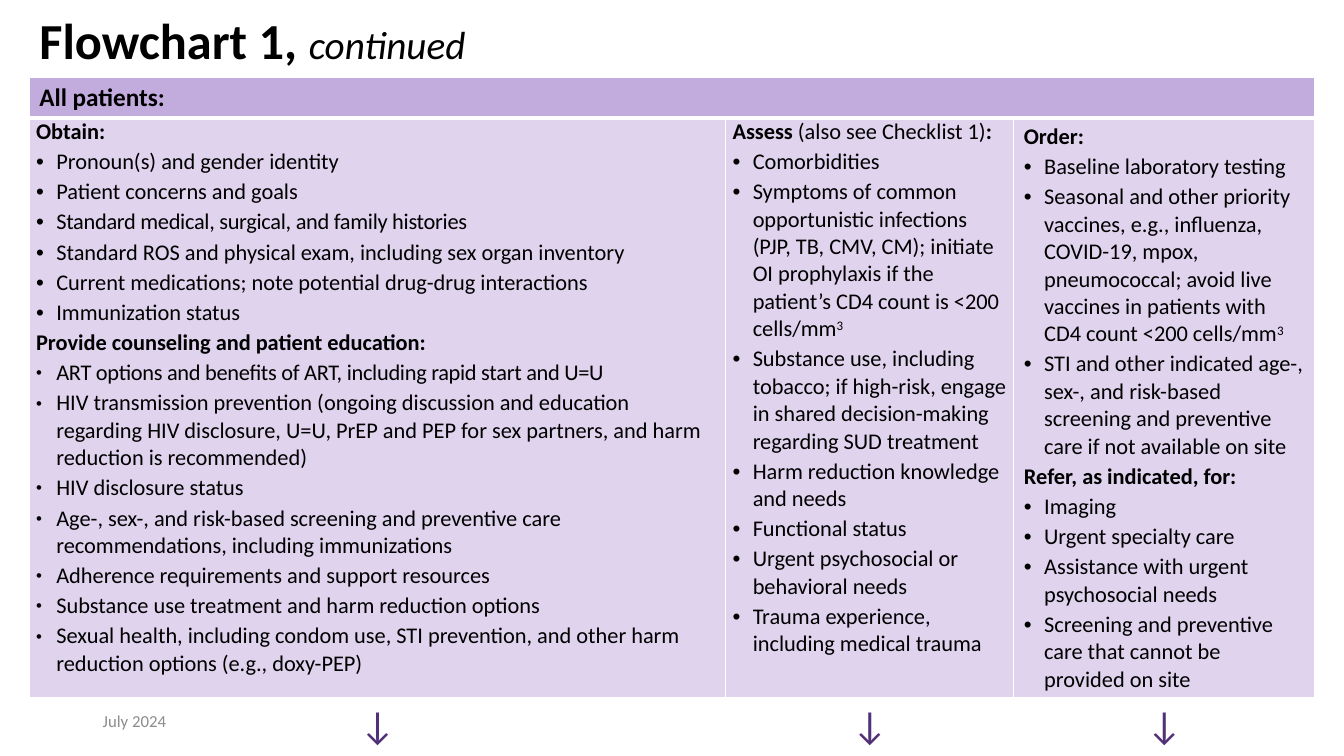
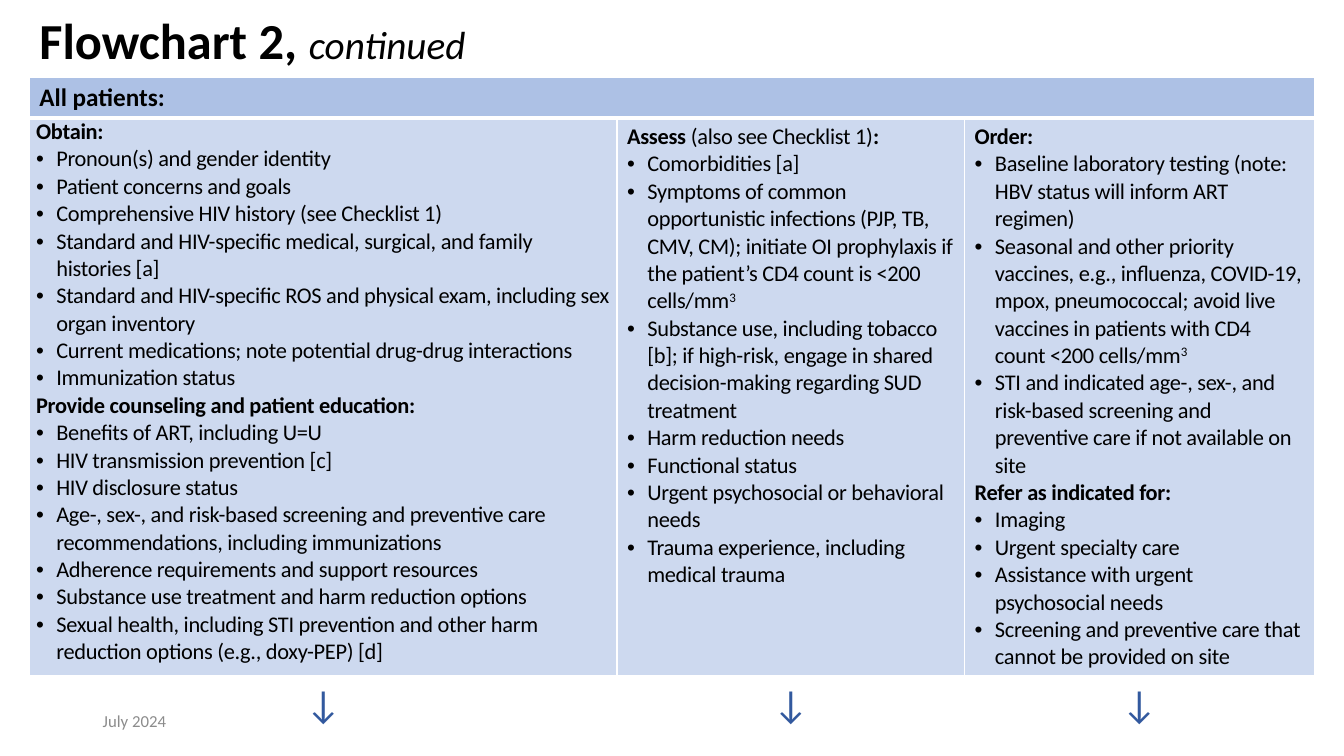
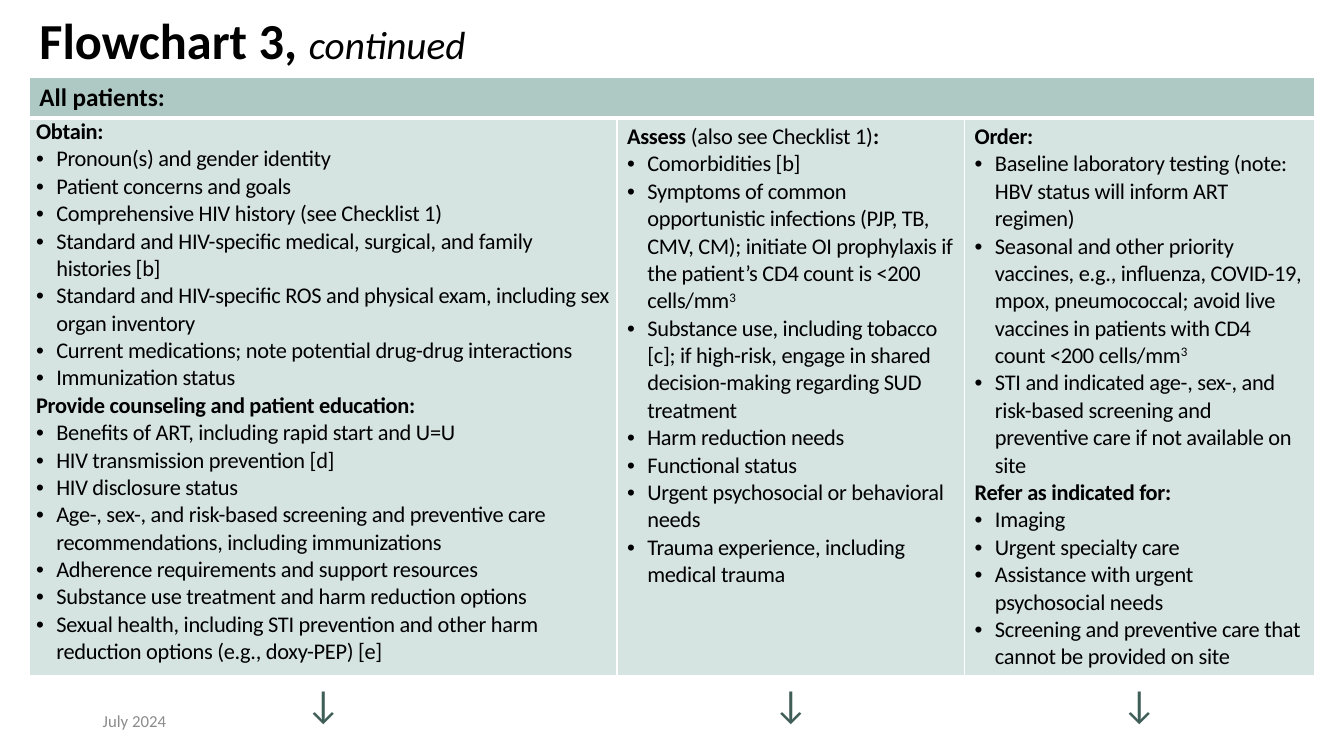
from collections import namedtuple

from lxml import etree
from pptx import Presentation
from pptx import util as u
from pptx.dml.color import RGBColor
from pptx.enum import text
from pptx.oxml import ns

Cm, Pt = u.Cm, u.Pt
Section = namedtuple("Section", "heading items bullet_size", defaults=[100])
# Column: tight cells have narrow side margins and none above
Column = namedtuple("Column", "width sections tight", defaults=[False])
Theme = namedtuple("Theme", "header body arrow")


def color(value):
    return RGBColor.from_string(value)


def add_xml(parent, tag, **attributes):
    return etree.SubElement(parent, ns.qn(tag), **attributes)


class Flowchart:
    """Holds the shared style and the current slide."""
    FONT, INK, GRAY, WHITE = "Calibri", "000000", "8C8C8C", "FFFFFF"
    LEFT, TABLE_TOP = Cm(0.74), Cm(1.96)
    HEADER_HEIGHT, ARROW_HEIGHT = Cm(1), Cm(1.21)
    INDENT = Cm(0.51)

    def __init__(self):
        self.deck = Presentation()
        self.deck.slide_width, self.deck.slide_height = Cm(33.87), Cm(19.05)
        self.page = None

    def add_page(self, title):
        self.page = self.deck.slides.add_slide(self.deck.slide_layouts[5])
        self.title(title)
        self.footer("July 2024")

    def add_span(self, para, words, size, bold=False, ink=INK, italic=None,
                 **attributes):
        span = para.add_run()
        span.text = words
        font = span.font
        font.name, font.size, font.bold = self.FONT, Pt(size), bold
        font.italic = italic
        font.color.rgb = color(ink)
        for name, value in attributes.items():
            span._r.get_or_add_rPr().set(name, value)

    def title(self, words):
        box = self.page.shapes.title
        box.left, box.top, box.width, box.height = (
            self.LEFT, Cm(0.43), Cm(28), Cm(1.32))
        frame = box.text_frame
        frame.auto_size = text.MSO_AUTO_SIZE.NONE
        frame.vertical_anchor = text.MSO_ANCHOR.MIDDLE
        para = frame.paragraphs[0]
        para.alignment, para.line_spacing = text.PP_ALIGN.LEFT, 0.9
        self.add_span(para, words + ", ", 36, bold=True)
        self.add_span(para, "continued", 28, italic=True)

    def footer(self, words):
        box = self.page.shapes.add_textbox(Cm(2.34), Cm(17.65), Cm(7.62), Cm(1.02))
        frame = box.text_frame
        frame.word_wrap = True
        frame.vertical_anchor = text.MSO_ANCHOR.MIDDLE
        self.add_span(frame.paragraphs[0], words, 12, ink=self.GRAY)

    def borders(self, cell, top=1, bottom=1):
        properties = cell._tc.get_or_add_tcPr()
        widths = {"a:lnL": 1, "a:lnR": 1, "a:lnT": top, "a:lnB": bottom}
        for place, (tag, width) in enumerate(widths.items()):
            line = add_xml(properties, tag, w=str(Pt(width)))
            add_xml(add_xml(line, "a:solidFill"), "a:srgbClr", val=self.WHITE)
            properties.insert(place, line)

    def bullet(self, para, size):
        properties = para._p.get_or_add_pPr()
        properties.set("marL", str(self.INDENT))
        properties.set("indent", str(-self.INDENT))
        if size != 100:
            add_xml(properties, "a:buSzPct", val=str(size * 1000))
        add_xml(properties, "a:buFont", typeface="Arial")
        add_xml(properties, "a:buChar", char="•")

    def sections(self, cell, sections, gap, condensed):
        """In headings | toggles bold; in items ^ starts a superscript
        and a leading ~ condenses the line."""
        frame = cell.text_frame
        paras = iter(frame.paragraphs)

        def next_para():
            first = next(paras, None)
            para = first or frame.add_paragraph()
            para.space_before = Pt(0 if first else gap)
            para.space_after = Pt(gap)
            return para

        normal = "-20" if condensed else "0"
        for section in sections:
            para = next_para()
            for place, words in enumerate(section.heading.split("|")):
                self.add_span(para, words, 16, bold=place % 2 == 0, spc=normal)
            for item in section.items:
                para = next_para()
                self.bullet(para, section.bullet_size)
                spacing = "-20" if item.startswith("~") else normal
                base, _, raised = item.lstrip("~").partition("^")
                self.add_span(para, base, 16, spc=spacing)
                if raised:
                    self.add_span(para, raised, 16, spc=spacing, baseline="30000")

    def table(self, columns, theme, body_height, gap=0, condensed=False):
        heights = [self.HEADER_HEIGHT, body_height, self.ARROW_HEIGHT]
        widths = [Cm(column.width) for column in columns]
        table = self.page.shapes.add_table(
            3, len(columns), self.LEFT, self.TABLE_TOP, sum(widths), sum(heights)).table
        table.first_row = table.horz_banding = False
        for row, height in zip(table.rows, heights):
            row.height = height

        for place, column in enumerate(columns):
            table.columns[place].width = widths[place]
            header, body, arrow = (table.cell(row, place) for row in range(3))
            for cell, fill in ((header, theme.header), (body, theme.body)):
                cell.fill.solid()
                cell.fill.fore_color.rgb = color(fill)
            arrow.fill.background()
            self.borders(header, bottom=3)
            self.borders(body, top=3)
            self.borders(arrow)

            if column.tight:
                body.margin_left = body.margin_right = Cm(0.17)
                body.margin_top = body.margin_bottom = 0
            self.sections(body, column.sections, gap, condensed)
            para = arrow.text_frame.paragraphs[0]
            para.alignment = text.PP_ALIGN.CENTER
            self.add_span(para, "↓", 28, ink=theme.arrow)

        header = table.cell(0, 0)
        header.merge(table.cell(0, len(columns) - 1))
        self.add_span(header.text_frame.paragraphs[0], "All patients:", 18, bold=True)


# Wording that all slides share
COUNSELING = "Provide counseling and patient education:"
ASSESS = "Assess |(also see Checklist 1)|:"
IDENTITY = ["Pronoun(s) and gender identity", "Patient concerns and goals"]
MEDICATIONS = ["Current medications; note potential drug-drug interactions",
               "Immunization status"]
EDUCATION = [
    "HIV disclosure status",
    "Age-, sex-, and risk-based screening and preventive care recommendations, "
    "including immunizations",
    "Adherence requirements and support resources",
    "Substance use treatment and harm reduction options",
]
SYMPTOMS = ("Symptoms of common opportunistic infections (PJP, TB, CMV, CM); initiate "
            "OI prophylaxis if the patient’s CD4 count is <200 cells/mm^3")
SUBSTANCE = ("Substance use, including tobacco{}; if high-risk, engage in shared "
             "decision-making regarding SUD treatment")
WELLBEING = ["Functional status", "Urgent psychosocial or behavioral needs",
             "Trauma experience, including medical trauma"]
VACCINES = ("Seasonal and other priority vaccines, e.g., influenza, COVID-19, mpox, "
            "pneumococcal; avoid live vaccines in patients with CD4 count "
            "<200 cells/mm^3")
SCREENING = ("STI and {}indicated age-, sex-, and risk-based screening and preventive "
             "care if not available on site")
REFERRALS = ["Imaging", "Urgent specialty care",
             "Assistance with urgent psychosocial needs",
             "Screening and preventive care that cannot be provided on site"]


def first_columns():
    obtain = Section("Obtain:", IDENTITY + [
        "~Standard medical, surgical, and family histories",
        "Standard ROS and physical exam, including sex organ inventory"] + MEDICATIONS)
    counsel = Section(COUNSELING, [
        "~ART options and benefits of ART, including rapid start and U=U",
        "HIV transmission prevention (ongoing discussion and education regarding HIV "
        "disclosure, U=U, PrEP and PEP for sex partners, and harm reduction is "
        "recommended)"] + EDUCATION + [
        "Sexual health, including condom use, STI prevention, and other harm "
        "reduction options (e.g., doxy-PEP)"], 75)
    assess = Section(ASSESS, ["Comorbidities", SYMPTOMS, SUBSTANCE.format(""),
                              "Harm reduction knowledge and needs"] + WELLBEING)
    order = Section("Order:", ["Baseline laboratory testing", VACCINES,
                               SCREENING.format("other ")])
    refer = Section("Refer, as indicated, for:", REFERRALS)
    return [Column(17.55, [obtain, counsel], True), Column(7.26, [assess], True),
            Column(7.58, [order, refer])]


def later_columns(benefits, notes):
    """Columns of flowcharts 2 and 3, with their four footnote letters."""
    history, tobacco, prevention, sexual = (f" [{letter}]" for letter in notes)
    obtain = Section("Obtain:", IDENTITY + [
        "Comprehensive HIV history (see Checklist 1)",
        "Standard and HIV-specific medical, surgical, and family histories" + history,
        "Standard and HIV-specific ROS and physical exam, including sex organ "
        "inventory"] + MEDICATIONS)
    counsel = Section(COUNSELING, [
        benefits, "HIV transmission prevention" + prevention] + EDUCATION + [
        "Sexual health, including STI prevention and other harm reduction options "
        "(e.g., doxy-PEP)" + sexual])
    assess = Section(ASSESS, ["Comorbidities" + history, SYMPTOMS,
                              SUBSTANCE.format(tobacco),
                              "Harm reduction needs"] + WELLBEING)
    order = Section("Order:", [
        "Baseline laboratory testing (note: HBV status will inform ART regimen)",
        VACCINES, SCREENING.format("")])
    refer = Section("Refer as indicated for:", REFERRALS)
    return [Column(14.81, [obtain, counsel], True), Column(8.76, [assess]),
            Column(8.81, [order, refer])]


def main():
    chart = Flowchart()

    # Flowchart 1
    chart.add_page("Flowchart 1")
    chart.table(first_columns(), Theme("C2ABDD", "DFD3ED", "523178"), Cm(14.6), gap=1)

    # Flowcharts 2 and 3
    later = [
        ("Flowchart 2", "Benefits of ART, including U=U", "abcd",
         Theme("ADC1E5", "CDD9EF", "32599E")),
        ("Flowchart 3", "Benefits of ART, including rapid start and U=U", "bcde",
         Theme("AEC8C3", "D5E3E1", "405E58")),
    ]
    for title, benefits, notes, theme in later:
        chart.add_page(title)
        chart.table(later_columns(benefits, notes), theme, Cm(14.05), condensed=True)

    chart.deck.save("out.pptx")


if __name__ == "__main__":
    main()
